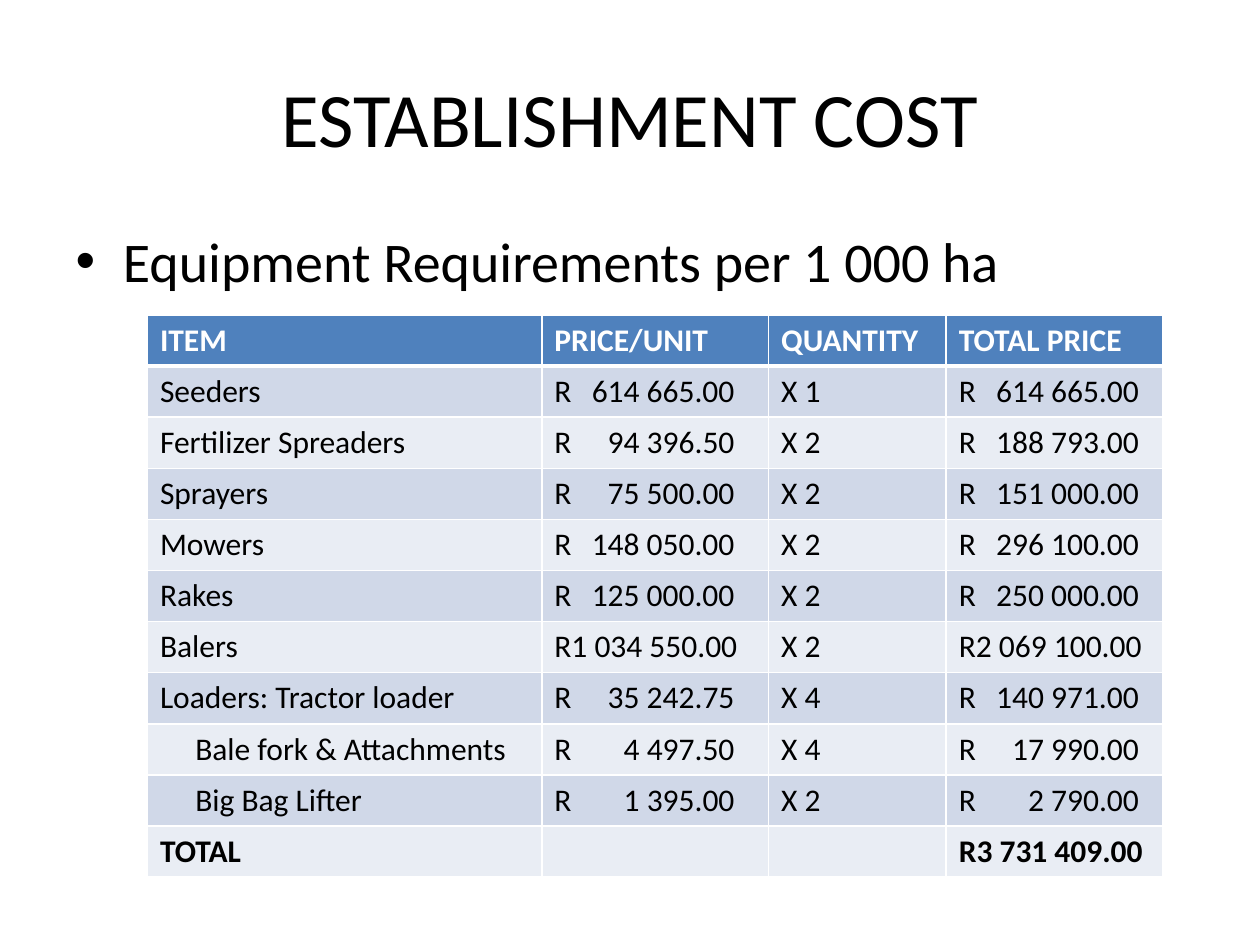
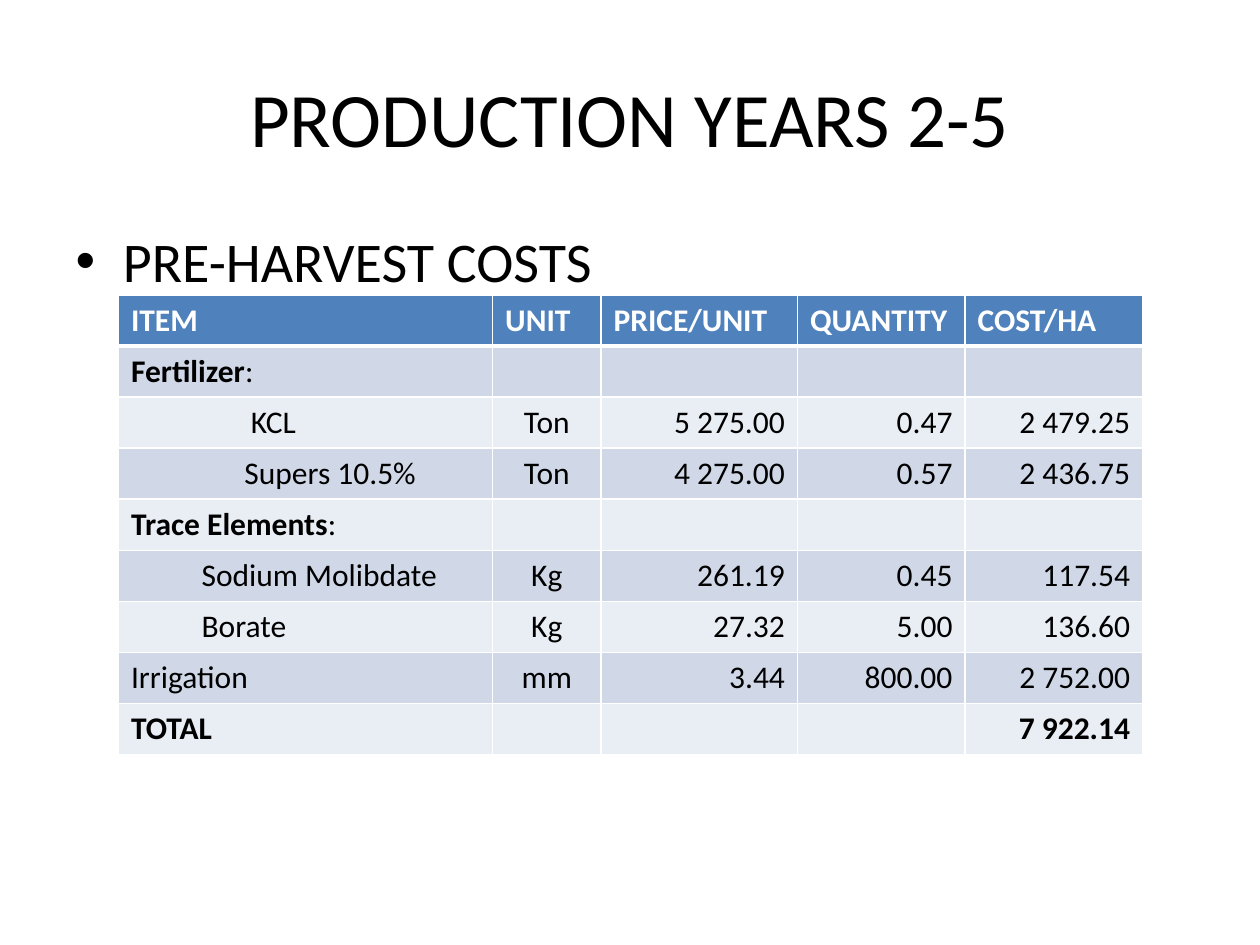
import pptx
import pptx.util
import pptx.dml.color
import pptx.enum.text
import pptx.oxml.ns
import lxml.etree

Inches = pptx.util.Inches
Pt = pptx.util.Pt
ALIGN = pptx.enum.text.PP_ALIGN
SIDES = {"l": ALIGN.LEFT, "c": ALIGN.CENTER, "r": ALIGN.RIGHT}
COLORS = {"head": "4F81BD", "odd": "D0D8E8", "even": "E9EDF4",
          "white": "FFFFFF", "black": "000000"}
FONT = "Calibri"
TAB = 1.43

SLIDES = [
    {
        "title": "ESTABLISHMENT COST",
        "point": "Equipment Requirements per 1 000 ha",
        "at": (1.17, 2.5), "height": 4.46,
        "cols": [3.13, 1.8, 1.41, 1.72], "align": "llll",
        "indent": {"Bale fork & Attachments": 0.28, "Big Bag Lifter": 0.28},
        "rows": [
            ("ITEM", "PRICE/UNIT", "QUANTITY", "TOTAL PRICE"),
            ("Seeders", "R\t614 665.00", "X 1", "R\t614 665.00"),
            ("Fertilizer Spreaders", "R\t94 396.50", "X 2", "R\t188 793.00"),
            ("Sprayers", "R\t75 500.00", "X 2", "R\t151 000.00"),
            ("Mowers", "R\t148 050.00", "X 2", "R\t296 100.00"),
            ("Rakes", "R\t125 000.00", "X 2", "R\t250 000.00"),
            ("Balers", "R1 034 550.00", "X 2", "R2 069 100.00"),
            ("Loaders: Tractor loader", "R\t35 242.75", "X 4", "R\t140 971.00"),
            ("Bale fork & Attachments", "R\t4 497.50", "X 4", "R\t17 990.00"),
            ("Big Bag Lifter", "R\t1 395.00", "X 2", "R\t2 790.00"),
            ("TOTAL", "", "", "R3 731 409.00"),
        ],
    },
    {
        "title": "PRODUCTION YEARS 2-5",
        "point": "PRE-HARVEST COSTS",
        "at": (0.94, 2.34), "height": 3.65,
        "cols": [2.97, 0.86, 1.56, 1.33, 1.41], "align": "lcrrr",
        "indent": {"KCL": 0.95, "Supers 10.5%": 0.9,
                   "Sodium Molibdate": 0.56, "Borate": 0.56},
        "rows": [
            ("ITEM", "UNIT", "PRICE/UNIT", "QUANTITY", "COST/HA"),
            ("Fertilizer:", "", "", "", ""),
            ("KCL", "Ton", "5 275.00", "0.47", "2 479.25"),
            ("Supers 10.5%", "Ton", "4 275.00", "0.57", "2 436.75"),
            ("Trace Elements:", "", "", "", ""),
            ("Sodium Molibdate", "Kg", "261.19", "0.45", "117.54"),
            ("Borate", "Kg", "27.32", "5.00", "136.60"),
            ("Irrigation", "mm", "3.44", "800.00", "2 752.00"),
            ("TOTAL", "", "", "", "7 922.14"),
        ],
    },
]


def tint(name):
    return pptx.dml.color.RGBColor.from_string(COLORS[name])


def style(para, size, color="black", bold=False):
    font = para.font
    font.name, font.size, font.bold = FONT, Pt(size), bold
    font.color.rgb = tint(color)


def add(parent, tag, **attrs):
    node = lxml.etree.SubElement(parent, pptx.oxml.ns.qn(tag))
    for key, value in attrs.items():
        node.set(key, str(value))
    return node


def place(shape, text, box, size):
    shape.left, shape.top, shape.width, shape.height = map(Inches, box)
    shape.text_frame.text = text
    para = shape.text_frame.paragraphs[0]
    style(para, size)
    return para


def rule(cell, row):
    props = cell._tc.get_or_add_tcPr()
    widths = {"L": 1, "R": 1, "T": 3 if row == 1 else 1, "B": 3 if row == 0 else 1}
    for spot, (side, width) in enumerate(widths.items()):
        line = add(props, "a:ln" + side, w=Pt(width))
        add(add(line, "a:solidFill"), "a:srgbClr", val=COLORS["white"])
        props.insert(spot, line)


def write(cell, text, indent, align, row, last):
    para = cell.text_frame.paragraphs[0]
    para.alignment = ALIGN.LEFT if row == 0 else SIDES[align]
    props = para._p.get_or_add_pPr()
    if indent:
        props.set("marL", str(Inches(indent)))
    if "\t" in text:
        add(add(props, "a:tabLst"), "a:tab", pos=Inches(TAB), algn="r")
    style(para, 18, "white" if row == 0 else "black", row in (0, last))
    if text.endswith(":"):
        for part, bold in ((text[:-1], True), (":", False)):
            run = para.add_run()
            run.text, run.font.bold = part, bold
    elif text:
        para.add_run().text = text


def fill_table(slide, data):
    rows, cols = data["rows"], data["cols"]
    left, top = data["at"]
    frame = slide.shapes.add_table(len(rows), len(cols), Inches(left), Inches(top),
                                   Inches(sum(cols)), Inches(data["height"]))
    table = frame.table
    for col, width in zip(table.columns, cols):
        col.width = Inches(width)
    for r, row in enumerate(rows):
        for c, text in enumerate(row):
            cell = table.cell(r, c)
            cell.fill.solid()
            cell.fill.fore_color.rgb = tint("head" if r == 0 else "odd" if r % 2 else "even")
            rule(cell, r)
            write(cell, text, data["indent"].get(text), data["align"][c], r, len(rows) - 1)


def main():
    deck = pptx.Presentation()
    deck.slide_width, deck.slide_height = Inches(10), Inches(7.5)
    for data in SLIDES:
        slide = deck.slides.add_slide(deck.slide_layouts[1])
        title, body = slide.placeholders
        place(title, data["title"], (0.5, 0.3, 9, 1.25), 44).alignment = ALIGN.CENTER
        place(body, data["point"], (0.5, 1.75, 9, 4.95), 32)
        fill_table(slide, data)
    deck.save("out.pptx")


if __name__ == "__main__":
    main()
